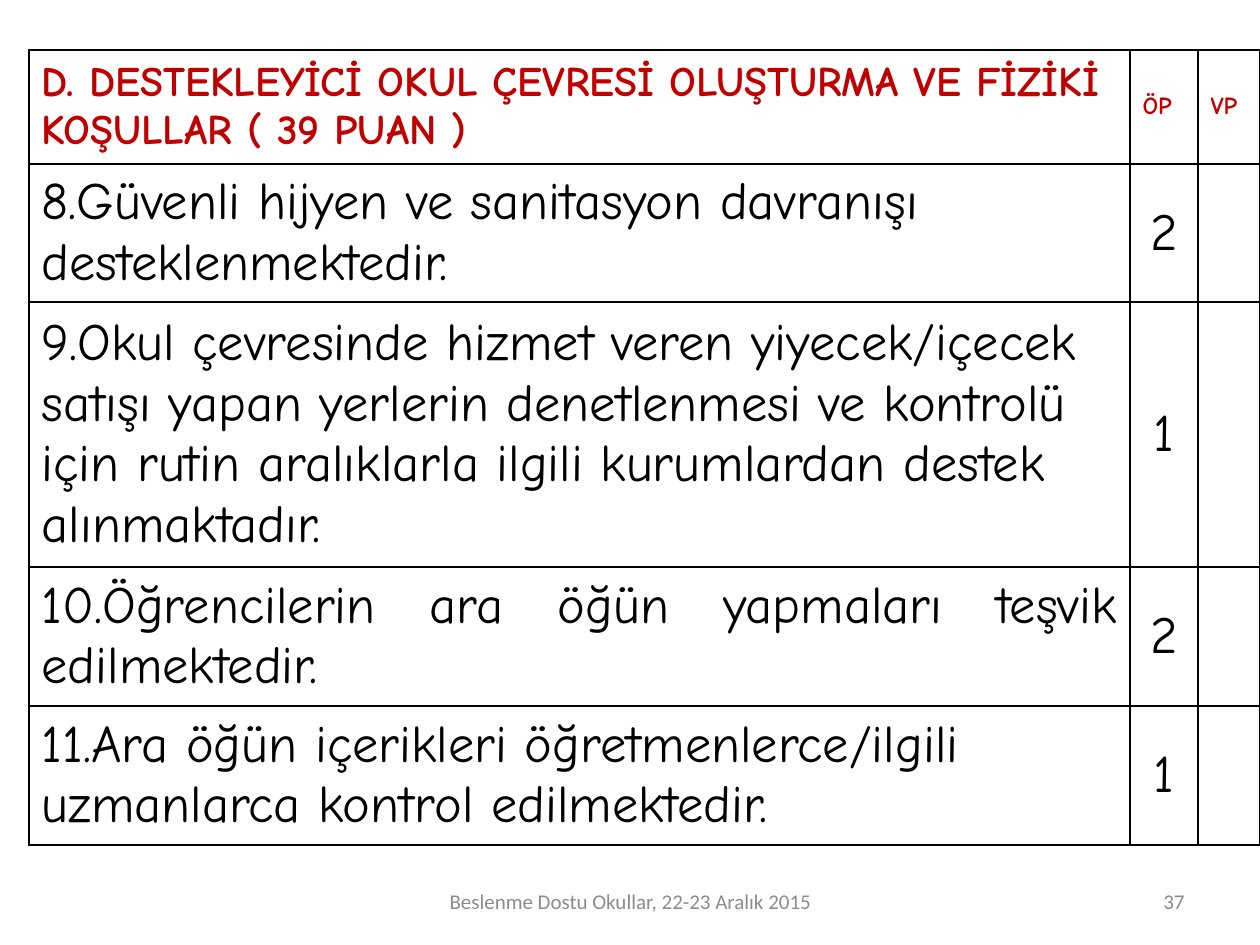
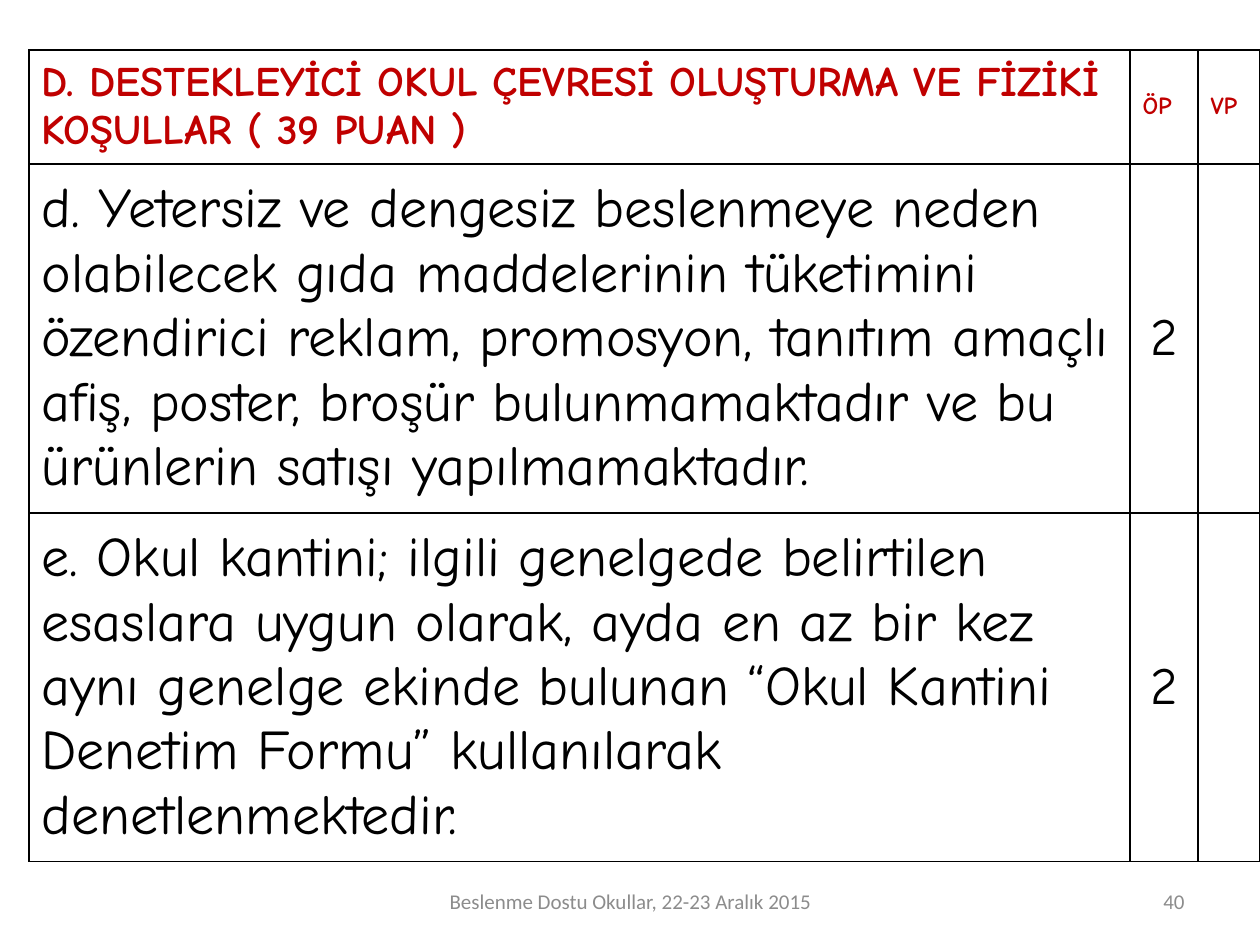
from lxml.etree import SubElement
from pptx import Presentation
from pptx.dml.color import RGBColor
from pptx.enum.text import MSO_ANCHOR as Anchor, PP_ALIGN as Align
from pptx.oxml.ns import qn
from pptx.util import Pt

SCALE = 914400 / 126
RED = RGBColor(0xC0, 0x00, 0x00)
BLACK = RGBColor(0x00, 0x00, 0x00)
GREY = RGBColor(0x8C, 0x8C, 0x8C)
COMIC, PLAIN = "Comic Neue", "Calibri"
COLS = (1101, 68, 62)
HEAD_TALL = 114
TITLE = "D. DESTEKLEYİCİ OKUL ÇEVRESİ OLUŞTURMA VE FİZİKİ KOŞULLAR ( 39 PUAN )"
EVENT = "Beslenme Dostu Okullar, 22-23 Aralık 2015"

SAFETY = [
    ("8.Güvenli hijyen ve sanitasyon davranışı desteklenmektedir.", "2", 138, Align.LEFT),
    ("9.Okul çevresinde hizmet veren yiyecek/içecek satışı yapan yerlerin denetlenmesi "
     "ve kontrolü için rutin aralıklarla ilgili kurumlardan destek alınmaktadır.",
     "1", 265, Align.LEFT),
    ("10.Öğrencilerin ara öğün yapmaları teşvik edilmektedir.", "2", 139, Align.JUSTIFY),
    ("11.Ara öğün içerikleri öğretmenlerce/ilgili uzmanlarca kontrol edilmektedir.",
     "1", 139, Align.LEFT),
]
CANTEEN = [
    ("d. Yetersiz ve dengesiz beslenmeye neden olabilecek gıda maddelerinin tüketimini "
     "özendirici reklam, promosyon, tanıtım amaçlı afiş, poster, broşür bulunmamaktadır "
     "ve bu ürünlerin satışı yapılmamaktadır.", "2", 349, Align.LEFT),
    ("e. Okul kantini; ilgili genelgede belirtilen esaslara uygun olarak, ayda en az bir "
     "kez aynı genelge ekinde bulunan “Okul Kantini Denetim Formu” kullanılarak "
     "denetlenmektedir.", "2", 348, Align.LEFT),
]


def px(count):
    """Turn pixels into EMU."""
    return round(count * SCALE)


def write(frame, text, size=30, font=COMIC, color=BLACK, bold=False, align=Align.LEFT):
    """Write one formatted paragraph into a text frame."""
    para = frame.paragraphs[0]
    para.alignment = align
    run = para.add_run()
    run.text = text
    run.font.size, run.font.name, run.font.bold = Pt(size), font, bold
    run.font.color.rgb = color


def frame_cell(cell):
    """Give a cell thin black borders, no fill and middle anchoring."""
    props = cell._tc.get_or_add_tcPr()
    for side in ("L", "R", "T", "B"):
        line = SubElement(props, qn(f"a:ln{side}"), w=str(Pt(1)))
        fill = SubElement(line, qn("a:solidFill"))
        SubElement(fill, qn("a:srgbClr"), val=str(BLACK))
    cell.fill.background()
    cell.vertical_anchor = Anchor.MIDDLE


def add_grid(slide, box, items, size):
    """Place the criteria table with its heading row."""
    talls = [HEAD_TALL] + [item[2] for item in items]
    left, top = box
    shape = slide.shapes.add_table(
        len(talls), len(COLS), px(left), px(top), px(sum(COLS)), px(sum(talls)))
    table = shape.table
    table.first_row = table.horz_banding = False
    for col, width in zip(table.columns, COLS):
        col.width = px(width)
    for row, tall in zip(table.rows, talls):
        row.height = px(tall)
    for cell in table.iter_cells():
        frame_cell(cell)
    for col, (text, points) in enumerate([(TITLE, 24), ("ÖP", 14), ("VP", 14)]):
        write(table.cell(0, col).text_frame, text, size=points, color=RED, bold=True)
    for row, (text, score, _, align) in enumerate(items, 1):
        write(table.cell(row, 0).text_frame, text, size=size, align=align)
        write(table.cell(row, 1).text_frame, score, align=Align.CENTER)


def add_note(slide, box, text, align):
    """Place one grey footer text in its box."""
    frame = slide.shapes.add_textbox(*map(px, box)).text_frame
    frame.word_wrap = True
    frame.vertical_anchor = Anchor.MIDDLE
    write(frame, text, size=12, font=PLAIN, color=GREY, align=align)


def add_page(deck, items, size, number):
    """Add a criteria slide with its table and footer."""
    slide = deck.slides.add_slide(deck.slide_layouts[6])
    add_grid(slide, (29, 50), items, size)
    add_note(slide, (431, 876, 399, 50), EVENT, Align.CENTER)
    add_note(slide, (903, 876, 294, 50), number, Align.RIGHT)


def main():
    """Build and save the deck."""
    deck = Presentation()
    deck.slide_width, deck.slide_height = px(1260), px(945)
    add_page(deck, SAFETY, 30, "37")
    add_page(deck, CANTEEN, 32, "40")
    deck.save("out.pptx")


if __name__ == "__main__":
    main()
